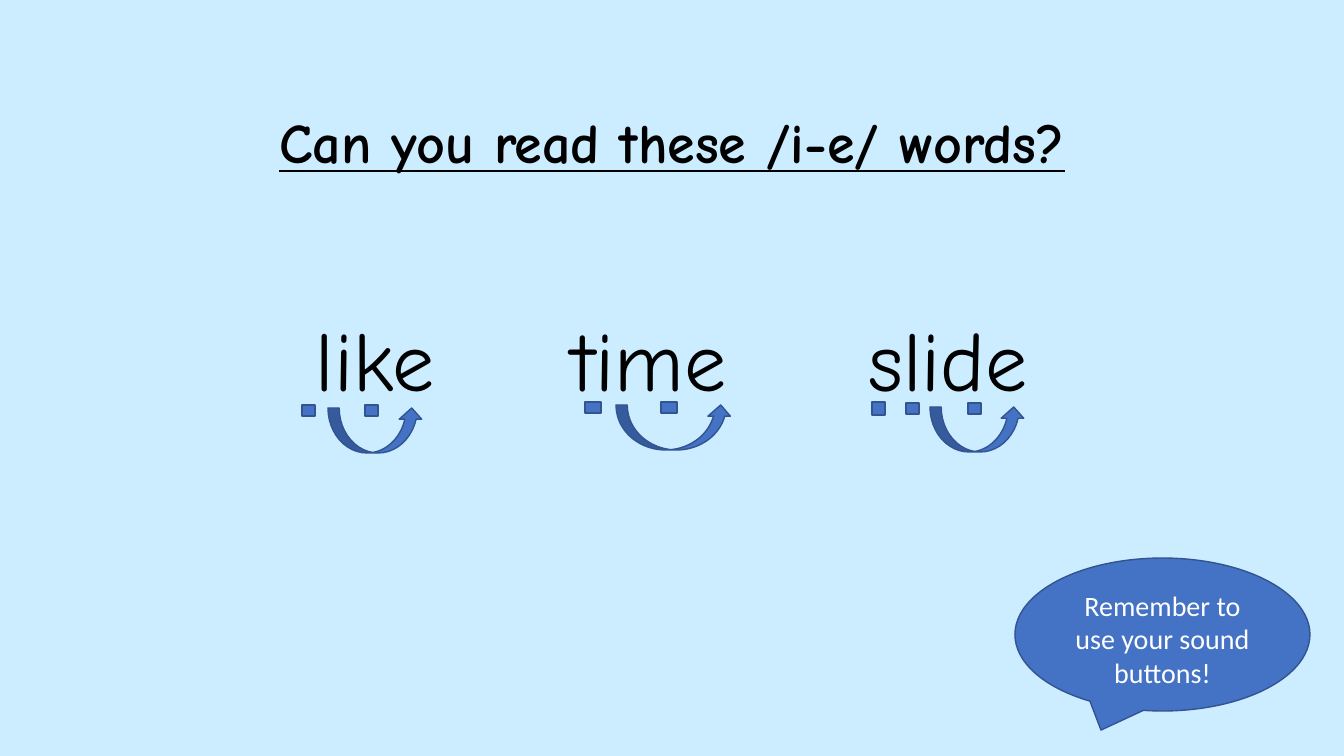
from dataclasses import dataclass

from pptx import Presentation
from pptx.dml.color import RGBColor
from pptx.enum.shapes import MSO_SHAPE
from pptx.enum.text import MSO_ANCHOR, MSO_AUTO_SIZE, PP_ALIGN
from pptx.shapes.autoshape import Shape
from pptx.slide import Slide
from pptx.util import Emu, Pt

RECT = MSO_SHAPE.RECTANGLE
ARROW = MSO_SHAPE.CURVED_UP_ARROW
BUBBLE = MSO_SHAPE.OVAL_CALLOUT
TOP, MIDDLE = MSO_ANCHOR.TOP, MSO_ANCHOR.MIDDLE
CENTER = PP_ALIGN.CENTER
FIXED = MSO_AUTO_SIZE.NONE

WIDE, HIGH = 1344, 756
SCALE = 12192000 / WIDE
SKY, BLUE, EDGE, BLACK, WHITE = "CCECFF", "4472C4", "325491", "000000", "FFFFFF"

HEAD = {"name": "Comic Neue", "size": Pt(40), "bold": True, "underline": True}
WORD = {"name": "Comic Neue", "size": Pt(60), "bold": False}
HINT = {"name": "Calibri", "size": Pt(20), "bold": False}


@dataclass(frozen=True)
class Box:
    left: int
    top: int
    width: int
    height: int


@dataclass(frozen=True)
class Word:
    """A word with its sound buttons and the arrow joining i to e."""
    text: str
    mid: int
    dots: tuple[Box, ...]
    arc: Box


WORDS = (
    Word("like", 375, (Box(302, 405, 13, 11), Box(365, 405, 13, 11)),
         Box(328, 408, 95, 45)),
    Word("time", 649, (Box(585, 402, 16, 11), Box(661, 402, 16, 11)),
         Box(616, 405, 116, 45)),
    Word("slide", 948, (Box(872, 402, 13, 13), Box(906, 403, 13, 11),
                        Box(968, 403, 13, 11)),
         Box(930, 407, 95, 45)),
)


def px(count: int) -> Emu:
    return Emu(round(count * SCALE))


def rgb(code: str) -> RGBColor:
    return RGBColor.from_string(code)


def place(box: Box) -> tuple[Emu, Emu, Emu, Emu]:
    return px(box.left), px(box.top), px(box.width), px(box.height)


def write(shape: Shape, text: str, style: dict, color: str,
          anchor: MSO_ANCHOR = TOP, side: int = 0, above: int = 0) -> None:
    frame = shape.text_frame
    form = {"word_wrap": True, "auto_size": FIXED, "vertical_anchor": anchor,
            "margin_left": px(side), "margin_right": px(side),
            "margin_top": px(above), "margin_bottom": 0}
    for key, value in form.items():
        setattr(frame, key, value)
    line = frame.paragraphs[0]
    line.alignment = CENTER
    run = line.add_run()
    run.text = text
    for key, value in style.items():
        setattr(run.font, key, value)
    run.font.color.rgb = rgb(color)


def draw(slide: Slide, kind: MSO_SHAPE, box: Box) -> Shape:
    shape = slide.shapes.add_shape(kind, *place(box))
    shape.shadow.inherit = False
    shape.fill.solid()
    shape.fill.fore_color.rgb = rgb(BLUE)
    shape.line.color.rgb = rgb(EDGE)
    shape.line.width = Pt(1)
    return shape


def add_word(slide: Slide, word: Word) -> None:
    width = 220
    box = Box(word.mid - width // 2, 307, width, 101)
    write(slide.shapes.add_textbox(*place(box)), word.text, WORD, BLACK)
    for dot in word.dots:
        draw(slide, RECT, dot)
    draw(slide, ARROW, word.arc)


def main() -> None:
    deck = Presentation()
    deck.slide_width, deck.slide_height = px(WIDE), px(HIGH)
    slide = deck.slides.add_slide(deck.slide_layouts[5])
    slide.background.fill.solid()
    slide.background.fill.fore_color.rgb = rgb(SKY)

    title = slide.shapes.title
    title.left, title.top, title.width, title.height = place(Box(12, 108, 1320, 70))
    write(title, "Can you read these /i-e/ words?", HEAD, BLACK)

    for word in WORDS:
        add_word(slide, word)

    bubble = draw(slide, BUBBLE, Box(1015, 558, 295, 153))
    write(bubble, "Remember to use your sound buttons!", HINT, WHITE,
          MIDDLE, side=4, above=8)
    deck.save("out.pptx")


if __name__ == "__main__":
    main()
